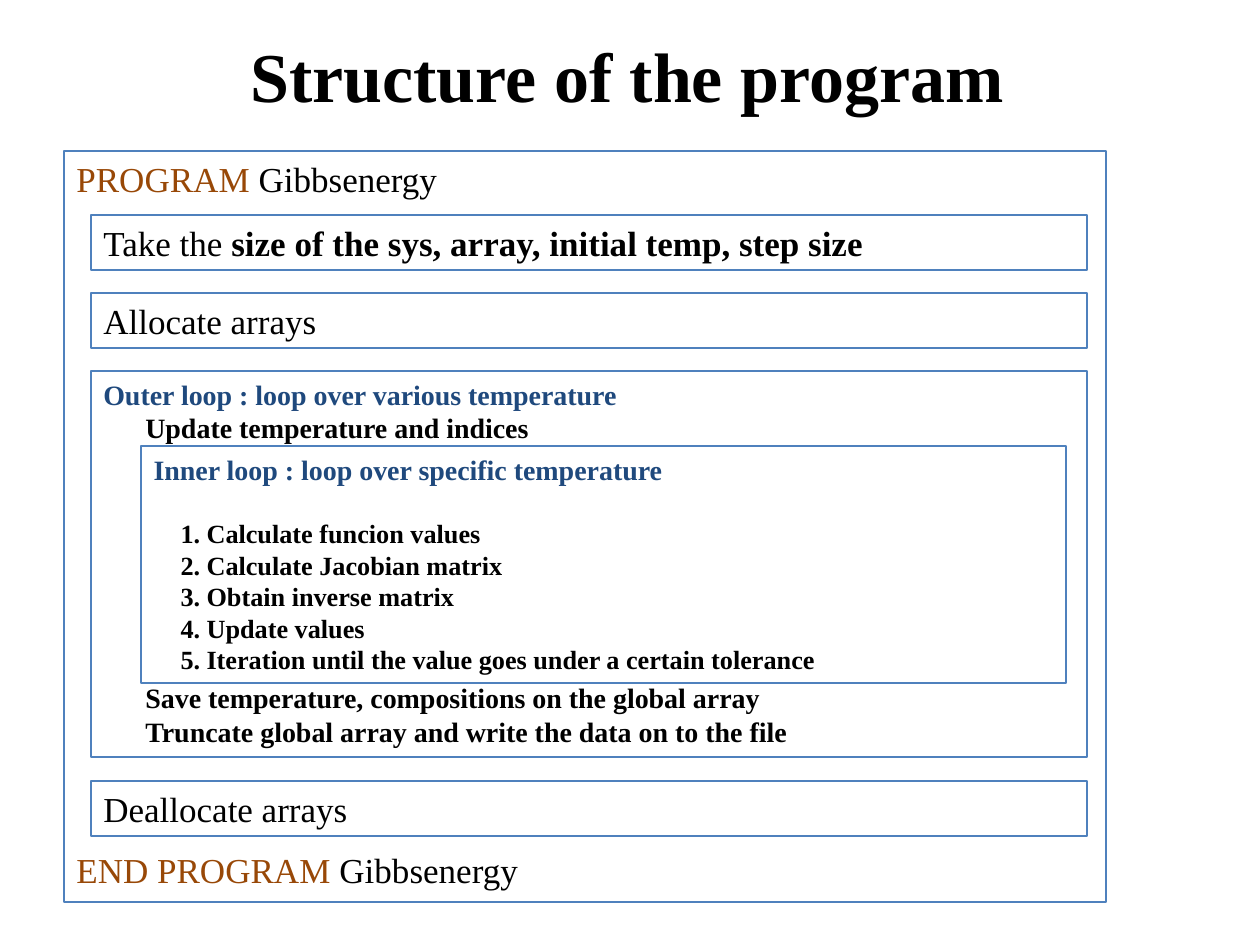
import pptx
import pptx.util
import pptx.dml.color
import pptx.enum.shapes
import pptx.enum.text
import lxml.etree
from dataclasses import dataclass

SCALE = 914400 / 126  # EMU in one px


@dataclass(frozen=True)
class Theme:
    font: str = "Times New Roman"
    ink: str = "000000"
    key: str = "984807"
    loop: str = "1F497D"
    edge: str = "4F81BD"
    title: int = 40
    step: int = 20
    body: int = 16
    item: int = 15


theme = Theme()


def px(n):
    return round(n * SCALE)


def fill(shape, lines):
    """Each line: runs of (text, colour, bold), size, space before, left px, hang px, numbered."""
    frame = shape.text_frame
    frame.word_wrap = True
    frame.auto_size = pptx.enum.text.MSO_AUTO_SIZE.NONE
    frame.vertical_anchor = pptx.enum.text.MSO_ANCHOR.TOP
    for i, (runs, size, gap, left, hang, count) in enumerate(lines):
        para = frame.paragraphs[0] if i == 0 else frame.add_paragraph()
        para.alignment = pptx.enum.text.PP_ALIGN.LEFT
        para.space_before = pptx.util.Pt(gap)
        props = para._p.get_or_add_pPr()
        props.set("marL", str(px(left)))
        props.set("indent", str(-px(hang)))
        tag = "buAutoNum" if count else "buNone"
        mark = lxml.etree.SubElement(props, pptx.oxml.ns.qn("a:" + tag))
        if count:
            mark.set("type", "arabicPeriod")
        for text, hue, bold in runs:
            run = para.add_run()
            run.text = text
            run.font.name = theme.font
            run.font.size = pptx.util.Pt(size)
            run.font.bold = bold
            run.font.color.rgb = pptx.dml.color.RGBColor.from_string(hue)


deck = pptx.Presentation()
deck.slide_width, deck.slide_height = px(1260), px(945)
slide = deck.slides.add_slide(deck.slide_layouts[1])

# Title
title = slide.shapes.title
title.left, title.top, title.width, title.height = px(-3), px(26), px(1260), px(97)
title.text_frame.text = "Structure of the program"
font = title.text_frame.paragraphs[0].runs[0].font
font.name, font.size, font.bold = theme.font, pptx.util.Pt(theme.title), True
font.color.rgb = pptx.dml.color.RGBColor.from_string(theme.ink)

# Program frame, steps and outer loop
name = ("Gibbsenergy", theme.ink, False)
blocks = [
    (64, 151, 1042, 751, [
        ([("PROGRAM ", theme.key, False), name], theme.step, 0, 0, 0, False),
        ([("END PROGRAM ", theme.key, False), name], theme.step, 371, 0, 0, False),
    ]),
    (91, 371, 996, 386, [
        ([("Outer loop : loop over various temperature", theme.loop, True)], theme.body, 0, 0, 0, False),
        ([("Update temperature and indices", theme.ink, True)], theme.body, 0, 42, 0, False),
        ([("Save temperature, compositions on the global array", theme.ink, True)],
         theme.body, 135, 42, 0, False),
        ([("Truncate global array and write the data on to the file", theme.ink, True)],
         theme.body, 0, 42, 0, False),
    ]),
]
steps = [
    (215, [("Take the ", theme.ink, False),
           ("size of the sys, array, initial temp, step size", theme.ink, True)]),
    (293, [("Allocate arrays", theme.ink, False)]),
    (781, [("Deallocate arrays", theme.ink, False)]),
]
blocks += [(91, top, 996, 55, [(runs, theme.step, 0, 0, 0, False)]) for top, runs in steps]

boxes = []
for left, top, width, height, lines in blocks:
    box = slide.shapes.add_shape(pptx.enum.shapes.MSO_SHAPE.RECTANGLE,
                                 px(left), px(top), px(width), px(height))
    box.shadow.inherit = False
    fill(box, lines)
    boxes.append(box)

# Inner loop
inner = slide.placeholders[1]
inner.left, inner.top, inner.width, inner.height = px(141), px(446), px(925), px(237)
tasks = ["Calculate funcion values", "Calculate Jacobian matrix", "Obtain inverse matrix",
         "Update values", "Iteration until the value goes under a certain tolerance"]
lines = [([("Inner loop : loop over specific temperature", theme.loop, True)], theme.body, 0, 0, 0, False)]
for i, task in enumerate(tasks):
    lines.append(([(task, theme.ink, True)], theme.item, 0 if i else 18, 53, 26, True))
fill(inner, lines)
boxes.append(inner)

# Outlines
for box in boxes:
    box.fill.background()
    box.line.color.rgb = pptx.dml.color.RGBColor.from_string(theme.edge)
    box.line.width = pptx.util.Pt(0.75)

deck.save("out.pptx")
